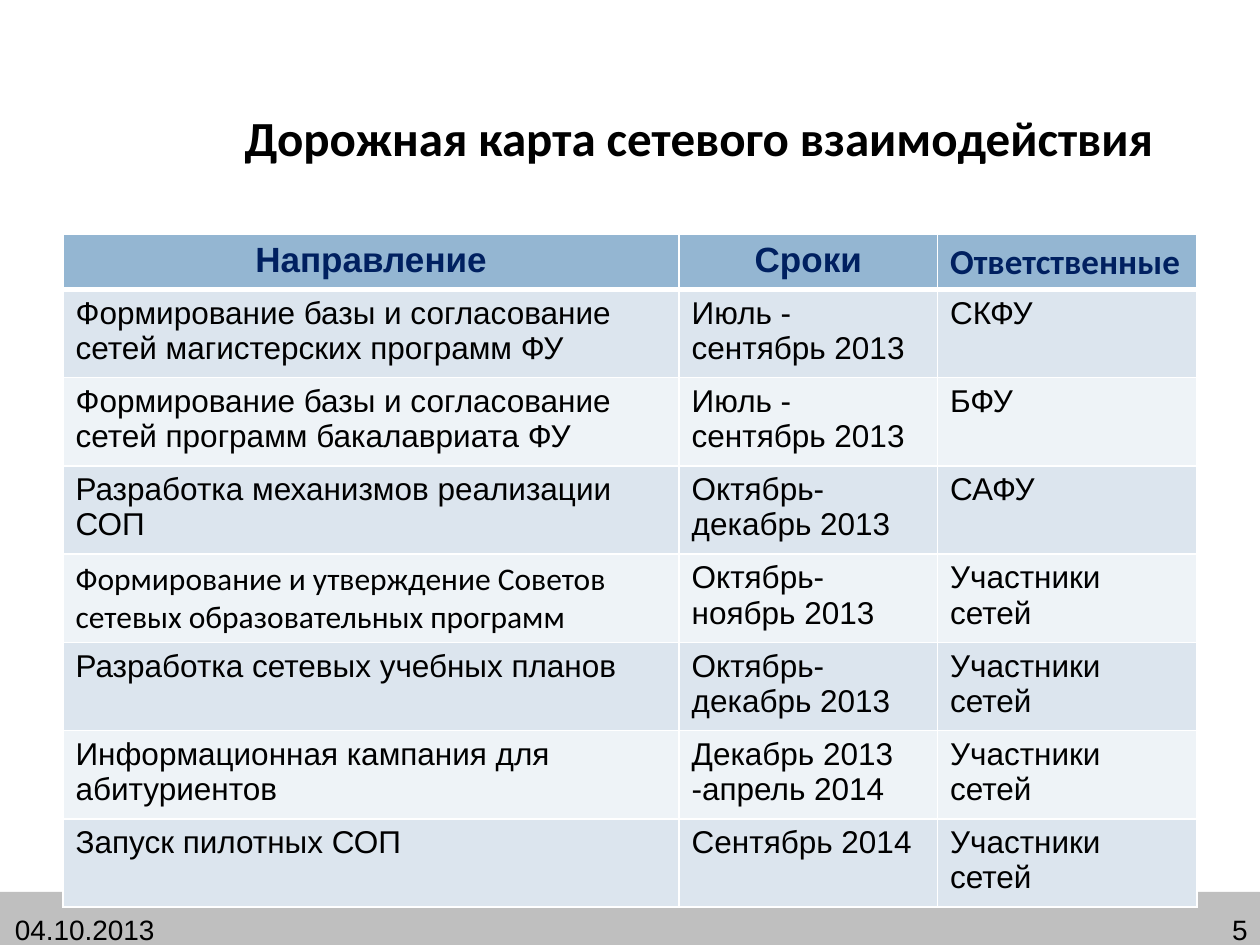
from lxml import etree
from pptx import Presentation
from pptx.dml.color import RGBColor
from pptx.enum import shapes, text
from pptx.oxml.ns import qn
from pptx.util import Cm, Pt

BLACK, NAVY, WHITE = "000000", "002060", "FFFFFF"
HEADER_FILL, BAND_FILLS = "94B6D2", ("DCE5EE", "EEF3F7")
COLUMN_WIDTHS = (12.42, 5.21, 5.23)
HEADINGS = ("Направление", "Сроки", "Ответственные")
STEPS = (
    ("Формирование базы и согласование сетей магистерских программ ФУ",
     "Июль - сентябрь 2013", "СКФУ"),
    ("Формирование базы и согласование сетей программ бакалавриата ФУ",
     "Июль - сентябрь 2013", "БФУ"),
    ("Разработка механизмов реализации СОП",
     "Октябрь-декабрь 2013", "САФУ"),
    ("Формирование и утверждение Советов сетевых образовательных программ",
     "Октябрь-ноябрь 2013", "Участники сетей"),
    ("Разработка сетевых учебных планов",
     "Октябрь-декабрь 2013", "Участники сетей"),
    ("Информационная кампания для абитуриентов",
     "Декабрь 2013 -апрель 2014", "Участники сетей"),
    ("Запуск пилотных СОП", "Сентябрь 2014", "Участники сетей"),
)
CALIBRI_CELLS = {(0, 2), (4, 0)}  # (row, column); the others are Arial
LEFT, CENTER, RIGHT = (text.PP_ALIGN.LEFT, text.PP_ALIGN.CENTER,
                       text.PP_ALIGN.RIGHT)


def color(value):
    return RGBColor.from_string(value)


def write(frame, words, size, font="Arial", fill=BLACK, bold=False, align=LEFT):
    para = frame.paragraphs[0]
    para.alignment = align
    span = para.add_run()
    span.text = words
    span.font.name = font
    span.font.size = Pt(size)
    span.font.bold = bold
    span.font.color.rgb = color(fill)


def add_title(page, words):
    title = page.shapes.title
    title.left, title.top = Cm(4.24), Cm(1.7)
    title.width, title.height = Cm(19.69), Cm(2.12)
    title.text_frame.vertical_anchor = text.MSO_ANCHOR.MIDDLE
    write(title.text_frame, words, 28, "Calibri", bold=True, align=CENTER)


def add_footer_bar(page):
    bar = page.shapes.add_shape(shapes.MSO_SHAPE.RECTANGLE,
                                Cm(-0.2), Cm(17.98), Cm(25.83), Cm(1.07))
    bar.shadow.inherit = False
    bar.fill.solid()
    bar.fill.fore_color.rgb = color("BFBFBF")
    bar.line.fill.background()


def add_footer_text(page, words, left, align):
    box = page.shapes.add_textbox(Cm(left), Cm(18.22), Cm(5.92), Cm(1.03))
    box.text_frame.word_wrap = True
    box.text_frame.vertical_anchor = text.MSO_ANCHOR.MIDDLE
    write(box.text_frame, words, 16, align=align)


def set_borders(cell, top, bottom):
    """Draw white borders; the widths of top and bottom are in points."""
    properties = cell._tc.get_or_add_tcPr()
    widths = {"a:lnL": 1, "a:lnR": 1, "a:lnT": top, "a:lnB": bottom}
    for place, (tag, width) in enumerate(widths.items()):
        line = etree.Element(qn(tag), w=str(Pt(width)))
        fill = etree.SubElement(line, qn("a:solidFill"))
        etree.SubElement(fill, qn("a:srgbClr"), val=WHITE)
        properties.insert(place, line)


def fill_cell(cell, words, row, column):
    header = row == 0
    cell.fill.solid()
    cell.fill.fore_color.rgb = color(
        HEADER_FILL if header else BAND_FILLS[(row - 1) % 2])
    set_borders(cell, top=3 if row == 1 else 1, bottom=3 if header else 1)
    write(cell.text_frame, words,
          size=20 if header else 18,
          font="Calibri" if (row, column) in CALIBRI_CELLS else "Arial",
          fill=NAVY if header else BLACK,
          bold=header,
          align=CENTER if header and column < 2 else LEFT)


def add_roadmap(page):
    rows = (HEADINGS,) + STEPS
    frame = page.shapes.add_table(len(rows), len(HEADINGS), Cm(1.27), Cm(4.73),
                                  Cm(sum(COLUMN_WIDTHS)), Cm(12.8))
    table = frame.table
    for column, width in zip(table.columns, COLUMN_WIDTHS):
        column.width = Cm(width)
    for row, entries in enumerate(rows):
        table.rows[row].height = Cm(1.04)  # rows grow with their text
        for column, words in enumerate(entries):
            fill_cell(table.cell(row, column), words, row, column)
    frame.height = Cm(12.8)


def main():
    deck = Presentation()
    deck.slide_width, deck.slide_height = Cm(25.4), Cm(19.05)
    page = deck.slides.add_slide(deck.slide_layouts[5])

    # Footer
    add_footer_bar(page)
    add_footer_text(page, "04.10.2013", 0.05, LEFT)
    add_footer_text(page, "5", 19.48, RIGHT)

    # Roadmap
    add_roadmap(page)
    add_title(page, "Дорожная карта сетевого взаимодействия")

    deck.save("out.pptx")


if __name__ == "__main__":
    main()
